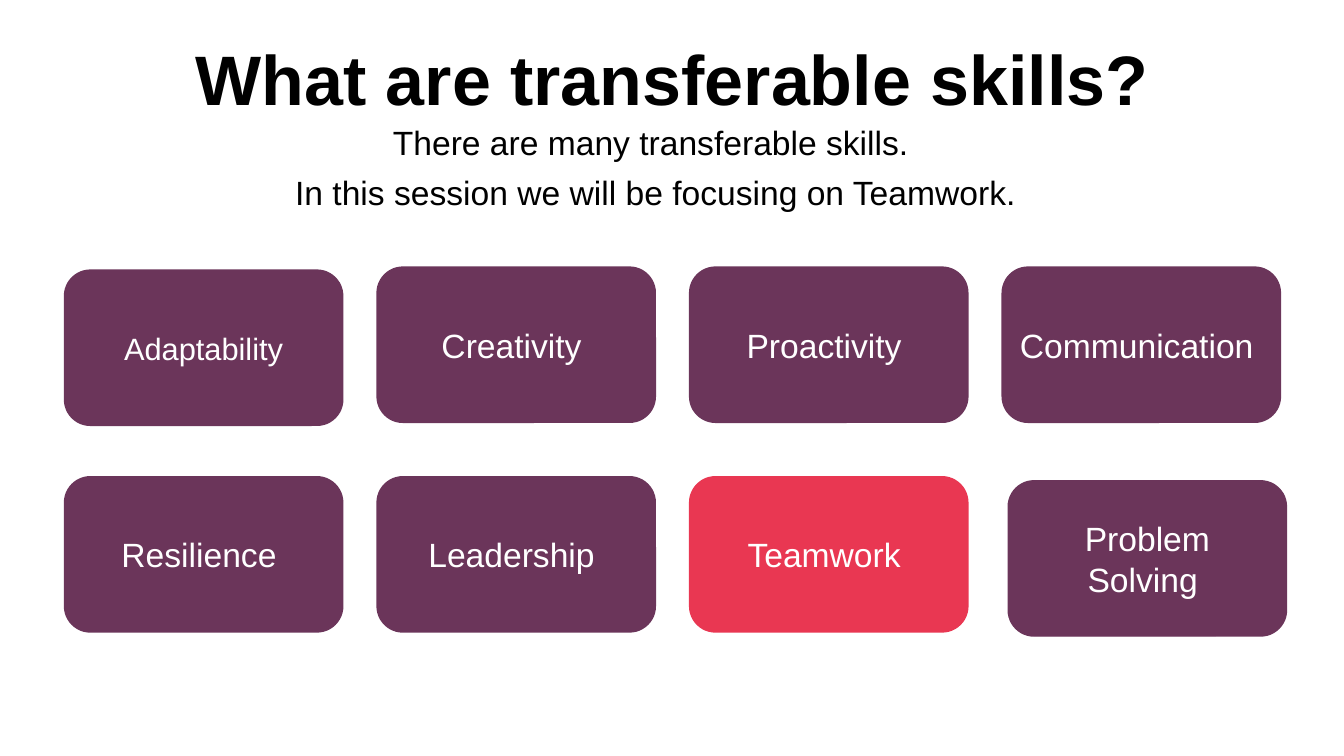
from lxml import etree
from pptx import Presentation
from pptx.dml.color import RGBColor
from pptx.enum import shapes, text
from pptx.oxml import ns
from pptx.util import Inches, Pt

PLUM, RED, WHITE, BLACK = "6B355A", "E93752", "FFFFFF", "000000"
LEFT, TOP = 0.64, 2.65
COLUMN_STEP, ROW_STEP = 3.1, 2.08
CARD_WIDTH, CARD_HEIGHT = 2.76, 1.54

# Label, then any changes to the regular card; a label's closing space shifts its centring
SKILLS = [
    [("Adaptability", {"size": 22, "dy": 0.03}), ("Creativity ", {}),
     ("Proactivity ", {}), ("Communication ", {})],
    [("Resilience ", {}), ("Leadership ", {}),
     ("Teamwork ", {"color": RED}), ("Problem Solving ", {"dx": 0.06, "dy": 0.04})],
]


def rgb(color):
    return RGBColor.from_string(color)


def place(shape, left, top, width, height):
    shape.left, shape.top = Inches(left), Inches(top)
    shape.width, shape.height = Inches(width), Inches(height)


def write(shape, lines, size, color, bold=False, anchor=text.MSO_ANCHOR.TOP,
          line_spacing=1.0, space_before=0):
    """Fill a shape with centred, unbulleted paragraphs."""
    frame = shape.text_frame
    frame.word_wrap = True
    frame.auto_size = text.MSO_AUTO_SIZE.NONE
    frame.vertical_anchor = anchor
    for index, line in enumerate(lines):
        paragraph = frame.add_paragraph() if index else frame.paragraphs[0]
        paragraph.text = line
        paragraph.alignment = text.PP_ALIGN.CENTER
        paragraph.line_spacing = line_spacing
        paragraph.space_before = Pt(space_before if index else 0)
        properties = paragraph._p.get_or_add_pPr()
        properties.set("marL", "0")
        properties.set("indent", "0")
        etree.SubElement(properties, ns.qn("a:buNone"))
        font = paragraph.runs[0].font
        font.name, font.size, font.bold = "Arial", Pt(size), bold
        font.color.rgb = rgb(color)


def add_card(slide, label, left, top, color=PLUM, size=24, dx=0, dy=0):
    card = slide.shapes.add_shape(
        shapes.MSO_SHAPE.ROUNDED_RECTANGLE, Inches(left + dx), Inches(top + dy),
        Inches(CARD_WIDTH), Inches(CARD_HEIGHT))
    card.shadow.inherit = False
    card.fill.solid()
    card.fill.fore_color.rgb = rgb(color)
    card.line.color.rgb = rgb(color)
    card.line.width = Pt(1)
    write(card, [label], size, WHITE, anchor=text.MSO_ANCHOR.MIDDLE)


def main():
    presentation = Presentation()
    presentation.slide_width, presentation.slide_height = Inches(13.33), Inches(7.5)
    slide = presentation.slides.add_slide(presentation.slide_layouts[1])

    title, body = slide.shapes.title, slide.placeholders[1]
    place(title, 0.92, 0.4, 11.5, 1.45)
    write(title, ["What are transferable skills?"], 50, BLACK, bold=True, line_spacing=0.9)
    place(body, 0.75, 1.2, 11.5, 4.38)
    write(body, ["There are many transferable skills. ",
                 "In this session we will be focusing on Teamwork."],
          24, BLACK, line_spacing=0.9, space_before=10)

    for row, skills in enumerate(SKILLS):
        for column, (label, changes) in enumerate(skills):
            add_card(slide, label, LEFT + column * COLUMN_STEP,
                     TOP + row * ROW_STEP, **changes)

    presentation.save("out.pptx")


if __name__ == "__main__":
    main()
